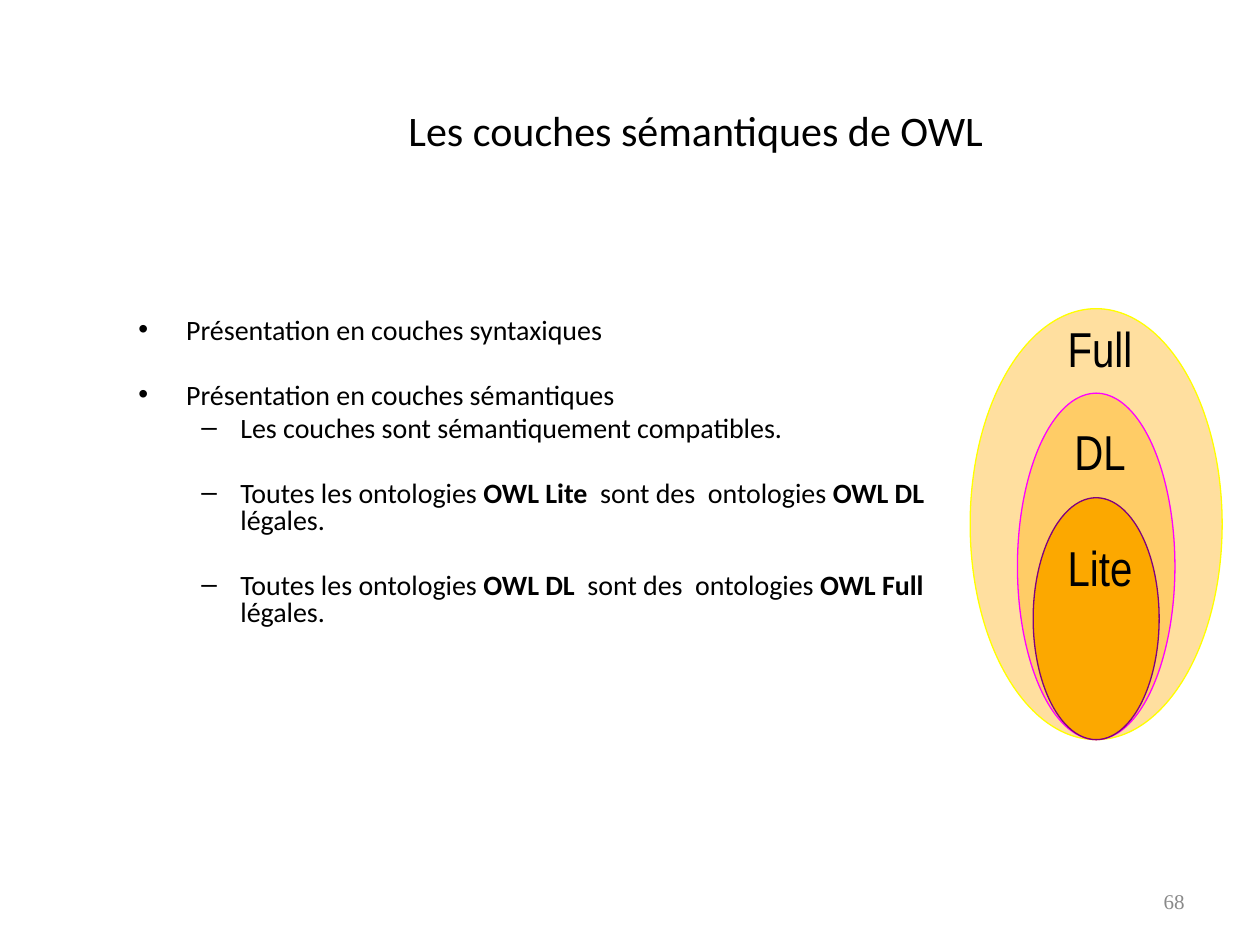
import pptx
import pptx.dml.color
import pptx.enum.shapes
import pptx.enum.text
import pptx.oxml.ns
import pptx.util
from lxml import etree
from pptx.util import Inches

ALIGN = pptx.enum.text.PP_ALIGN
ANCHOR = pptx.enum.text.MSO_ANCHOR

LEVELS = [("•", 0.38, 0.38), ("–", 0.81, 0.31)]
TIGHT, LOOSE = 3.2, 22
POINTS = [
    (0, TIGHT, ["Présentation en couches syntaxiques"]),
    (0, LOOSE, ["Présentation en couches sémantiques"]),
    (1, TIGHT, ["Les couches sont sémantiquement compatibles."]),
    (1, LOOSE, ["Toutes les ontologies ", "OWL Lite", "  sont des  ontologies ",
                "OWL DL", " légales."]),
    (1, LOOSE, ["Toutes les ontologies ", "OWL DL", "  sont des  ontologies ",
                "OWL Full", " légales."]),
]
LAYERS = [
    ("Full", 2, 3.42, "FFDF9F", "FFFF00", 0.03),
    ("DL", 1.25, 2.75, "FFCC66", "FF00FF", 0.18),
    ("Lite", 1, 1.92, "FCA800", "800080", 0.27),
]


def colour(value):
    return pptx.dml.color.RGBColor.from_string(value)


def add_text(para, text, font="Calibri", size=16, color="000000", bold=False, align=None):
    span = para.add_run()
    span.text = text
    span.font.name = font
    span.font.size = pptx.util.Pt(size)
    span.font.bold = bold
    span.font.color.rgb = colour(color)
    if align is not None:
        para.alignment = align


def add_box(page, left, top, width, height, wrap=True, anchor=ANCHOR.TOP):
    box = page.shapes.add_textbox(Inches(left), Inches(top), Inches(width), Inches(height))
    box.text_frame.word_wrap = wrap
    box.text_frame.vertical_anchor = anchor
    return box.text_frame


def set_bullet(para, level):
    symbol, margin, hanging = LEVELS[level]
    para.level = level
    properties = para._p.get_or_add_pPr()
    properties.set("marL", str(Inches(margin)))
    properties.set("indent", str(-Inches(hanging)))
    font = etree.SubElement(properties, pptx.oxml.ns.qn("a:buFont"))
    font.set("typeface", "Arial")
    bullet = etree.SubElement(properties, pptx.oxml.ns.qn("a:buChar"))
    bullet.set("char", symbol)


def place_title(page, left, top, width, height):
    title = page.shapes.title
    title.left, title.top = Inches(left), Inches(top)
    title.width, title.height = Inches(width), Inches(height)
    frame = title.text_frame
    frame.auto_size = pptx.enum.text.MSO_AUTO_SIZE.NONE
    frame.vertical_anchor = ANCHOR.BOTTOM
    add_text(frame.paragraphs[0], "Les couches sémantiques de OWL ", size=24,
             align=ALIGN.CENTER)


def place_points(page, left, top, width, height):
    frame = add_box(page, left, top, width, height)
    for index, (level, space, parts) in enumerate(POINTS):
        para = frame.add_paragraph() if index else frame.paragraphs[0]
        para.line_spacing = 0.8
        para.space_before = pptx.util.Pt(space)
        set_bullet(para, level)
        for position, part in enumerate(parts):
            add_text(para, part, bold=position % 2 == 1)


def place_layers(page, left, top, width, height):
    center, bottom = left + width / 2, top + height
    for name, layer_width, layer_height, fill, line, offset in LAYERS:
        layer = page.shapes.add_shape(
            pptx.enum.shapes.MSO_SHAPE.OVAL,
            Inches(center - layer_width / 2), Inches(bottom - layer_height),
            Inches(layer_width), Inches(layer_height))
        layer.shadow.inherit = False
        layer.fill.solid()
        layer.fill.fore_color.rgb = colour(fill)
        layer.line.color.rgb = colour(line)
        layer.line.width = pptx.util.Pt(0.75)
        label = add_box(page, center - 0.33, bottom - layer_height + offset,
                        0.72, 0.57, wrap=False)
        add_text(label.paragraphs[0], name, font="Arial Narrow", size=28,
                 align=ALIGN.CENTER)


def place_page_number(page, left, top, width, height):
    frame = add_box(page, left, top, width, height, anchor=ANCHOR.MIDDLE)
    add_text(frame.paragraphs[0], "68", font="Times New Roman", size=12,
             color="898989", align=ALIGN.RIGHT)


def main():
    deck = pptx.Presentation()
    deck.slide_width, deck.slide_height = Inches(10), Inches(7.5)
    page = deck.slides.add_slide(deck.slide_layouts[5])
    place_title(page, 1.46, 0.52, 8.2, 0.76)
    place_points(page, 1, 2.48, 6.44, 4.12)
    place_page_number(page, 7.17, 6.95, 2.33, 0.4)
    place_layers(page, 7.7, 2.45, 2, 3.42)
    deck.save("out.pptx")


if __name__ == "__main__":
    main()
